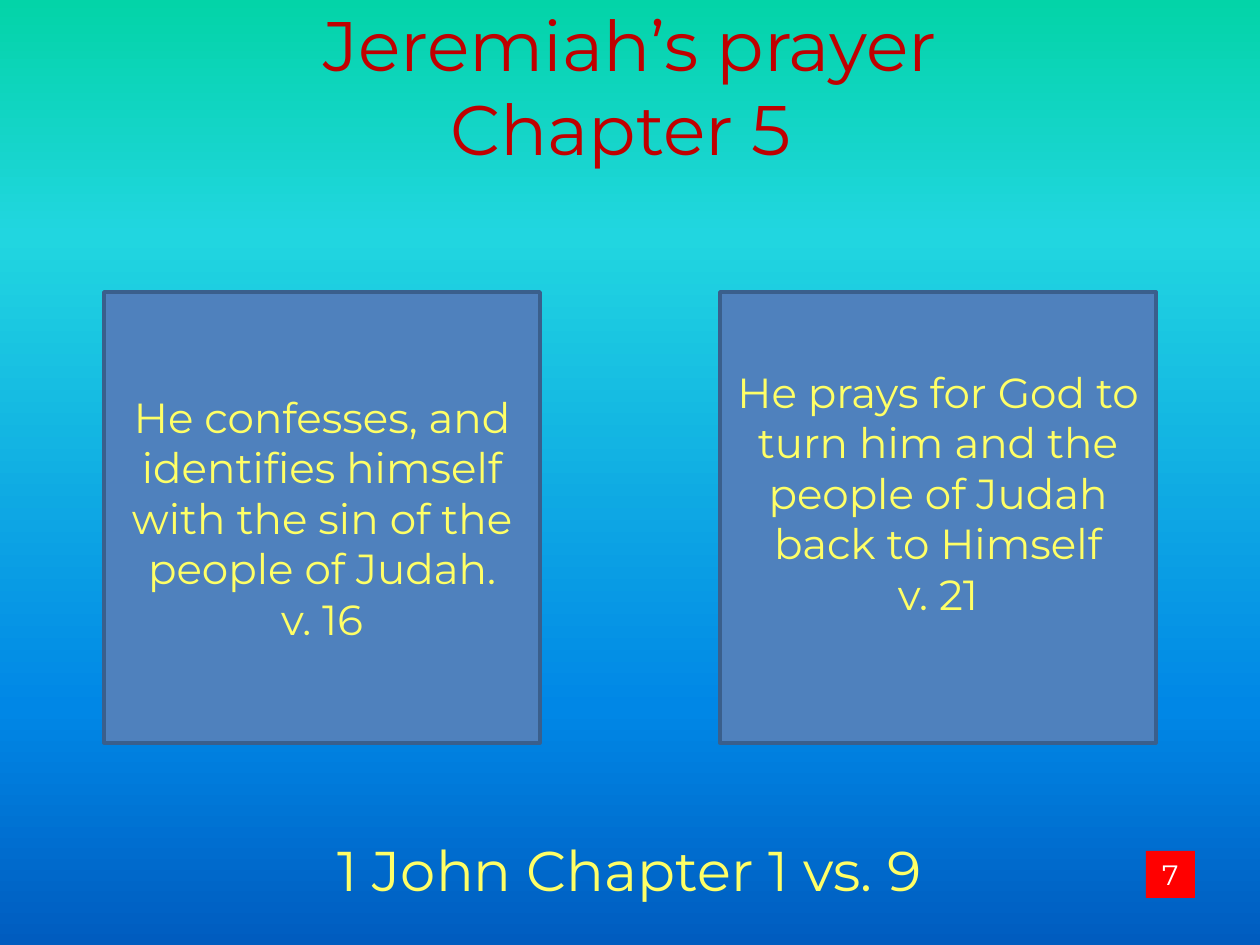
from copy import deepcopy

from pptx import Presentation, util as u
from pptx.dml.color import RGBColor
from pptx.enum import shapes, text
from pptx.oxml.ns import qn

PX = u.Inches(1) / 126
FONT = "Montserrat"
RED, YELLOW, WHITE = "C00000", "FFFF66", "FFFFFF"
SKY = [(0, "03D4A8"), (25, "21D6E0"), (75, "0087E6"), (100, "005CBF")]


def px(length):
    return u.Emu(round(length * PX))


def color(code):
    return RGBColor.from_string(code)


def write(shape, lines, size, ink, anchor=text.MSO_ANCHOR.TOP, inset=6, bottom=6):
    frame = shape.text_frame
    frame.word_wrap = True
    frame.auto_size = text.MSO_AUTO_SIZE.NONE
    frame.vertical_anchor = anchor
    frame.margin_left = frame.margin_right = px(inset * 2)
    frame.margin_top, frame.margin_bottom = px(inset), px(bottom)
    for index, line in enumerate(lines):
        para = frame.add_paragraph() if index else frame.paragraphs[0]
        para.alignment = text.PP_ALIGN.CENTER
        span = para.add_run()
        span.text = line
        span.font.name, span.font.size = FONT, u.Pt(size)
        span.font.color.rgb = color(ink)


class Page:
    def __init__(self, deck):
        self.slide = deck.slides.add_slide(deck.slide_layouts[5])

    def background(self, stops):
        fill = self.slide.background.fill
        fill.gradient()
        fill.gradient_angle = 270
        # The default gradient has two stops; clone the first for the rest
        stop_list = self.slide.element.find(".//" + qn("a:gsLst"))
        while len(stop_list) < len(stops):
            stop_list.append(deepcopy(stop_list[0]))
        for stop, (percent, code) in zip(fill.gradient_stops, stops):
            stop.position = percent / 100
            stop.color.rgb = color(code)

    def title(self, area, lines, **style):
        title = self.slide.shapes.title
        title.left, title.top, title.width, title.height = map(px, area)
        write(title, lines, **style)

    def label(self, area, lines, **style):
        write(self.slide.shapes.add_textbox(*map(px, area)), lines, **style)

    def box(self, area, lines, fill, line=None, **style):
        box = self.slide.shapes.add_shape(
            shapes.MSO_SHAPE.RECTANGLE, *map(px, area))
        box.shadow.inherit = False
        box.fill.solid()
        box.fill.fore_color.rgb = color(fill)
        if line:
            box.line.color.rgb = color(line)
            box.line.width = u.Pt(2)
        else:
            box.line.fill.background()
        write(box, lines, anchor=text.MSO_ANCHOR.MIDDLE, **style)


def main():
    deck = Presentation()
    deck.slide_width, deck.slide_height = px(1260), px(945)
    page = Page(deck)
    page.background(SKY)

    # Heading
    page.title((0, -4, 1260, 183), ["Jeremiah’s prayer", "Chapter 5 "],
               size=40, ink=RED)

    # Two parts of the prayer; the second text sits higher in its box
    prayers = [
        (["He confesses, and identifies himself with the sin of the "
          "people of Judah.", "v. 16"], 6),
        (["He prays for God to turn him and the people of Judah "
          "back to Himself", "v. 21"], 56),
    ]
    for column, (lines, bottom) in enumerate(prayers):
        page.box((104 + 616 * column, 292, 436, 451), lines, "4F81BD", "3A5F8C",
                 size=24, ink=YELLOW, bottom=bottom)

    # Closing reference and page number
    page.label((0, 829, 1260, 81), ["1 John Chapter 1 vs. 9"],
               size=32, ink=YELLOW)
    page.box((1146, 851, 49, 47), ["7"], "FF0000", size=16, ink=WHITE)

    deck.save("out.pptx")


if __name__ == "__main__":
    main()
